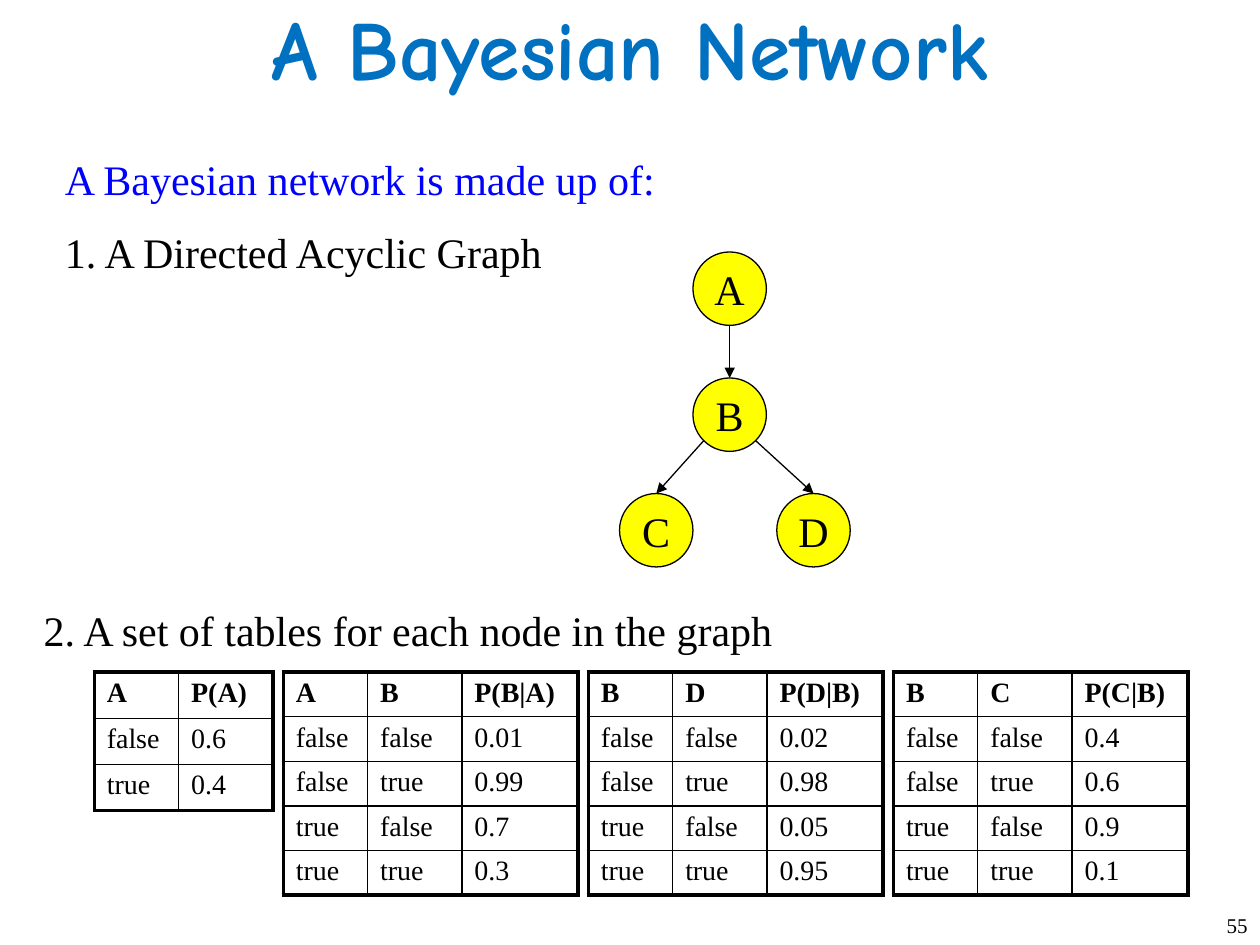
"""Build a slide that explains a Bayesian network by its graph and its probability tables."""
import math
from dataclasses import dataclass

import pptx
import pptx.dml.color
import pptx.enum.shapes
import pptx.enum.text
import pptx.oxml
import pptx.oxml.ns
import pptx.util
from pptx.util import Cm

BLACK = pptx.dml.color.RGBColor(0x00, 0x00, 0x00)
BLUE = pptx.dml.color.RGBColor(0x00, 0x00, 0xFF)
TITLE_BLUE = pptx.dml.color.RGBColor(0x00, 0x70, 0xC0)
YELLOW = pptx.dml.color.RGBColor(0xFF, 0xFF, 0x00)
SERIF = "Times New Roman"
ALIGN = pptx.enum.text.PP_ALIGN
ANCHOR = pptx.enum.text.MSO_ANCHOR

NODE_SIZE = 1.48
THIN, THICK = 1, 2.25
TABLES_LEFT, TABLES_TOP, TABLES_GAP = 1.9, 13.55, 0.21
COLUMN_WIDTHS = {2: (1.7, 1.9), 3: (1.7, 1.9, 2.34)}


@dataclass(frozen=True)
class Style:
    size: float = 24
    color: pptx.dml.color.RGBColor = BLACK
    font: str = SERIF
    bold: bool = False
    align: ALIGN = ALIGN.LEFT
    anchor: ANCHOR = ANCHOR.TOP


@dataclass(frozen=True)
class Caption:
    text: str
    left: float
    top: float
    width: float
    height: float
    style: Style = Style()


@dataclass(frozen=True)
class Node:
    name: str
    left: float
    top: float


@dataclass(frozen=True)
class ProbabilityTable:
    header: tuple[str, ...]
    rows: tuple[tuple[str, ...], ...]
    row_height: float = 0.88


CAPTIONS = (
    Caption("A Bayesian Network", 0, 0, 25.4, 1.9,
            Style(48, TITLE_BLUE, "Comic Neue", True, ALIGN.CENTER, ANCHOR.MIDDLE)),
    Caption("A Bayesian network is made up of:", 1.06, 2.96, 12.7, 1.48, Style(color=BLUE)),
    Caption("1. A Directed Acyclic Graph", 1.06, 4.44, 10.58, 1.27),
    Caption("2. A set of tables for each node in the graph", 0.63, 12.07, 18.2, 1.27),
    Caption("55", 22.86, 18.26, 2.54, 0.79,
            Style(12, align=ALIGN.RIGHT, anchor=ANCHOR.MIDDLE)),
)
NODES = (Node("A", 13.97, 5.08), Node("B", 13.97, 7.62),
         Node("C", 12.49, 9.95), Node("D", 15.66, 9.95))
EDGES = (("A", "B"), ("B", "C"), ("B", "D"))


def conditional(parent: str, child: str, values: tuple[str, ...]) -> ProbabilityTable:
    """Return the table of a child given its parent."""
    states = ("false", "true")
    pairs = [(given, state) for given in states for state in states]
    rows = tuple((*pair, value) for pair, value in zip(pairs, values))
    return ProbabilityTable((parent, child, f"P({child}|{parent})"), rows)


TABLES = (
    ProbabilityTable(("A", "P(A)"), (("false", "0.6"), ("true", "0.4")), 0.93),
    conditional("A", "B", ("0.01", "0.99", "0.7", "0.3")),
    conditional("B", "D", ("0.02", "0.98", "0.05", "0.95")),
    conditional("B", "C", ("0.4", "0.6", "0.9", "0.1")),
)


def write(frame, text: str, style: Style) -> None:
    """Write one styled run into a text frame."""
    paragraph = frame.paragraphs[0]
    paragraph.alignment = style.align
    run = paragraph.add_run()
    run.text = text
    run.font.name = style.font
    run.font.size = pptx.util.Pt(style.size)
    run.font.bold = style.bold
    run.font.color.rgb = style.color


def add_caption(slide, caption: Caption) -> None:
    """Add a wrapped text box."""
    box = slide.shapes.add_textbox(
        Cm(caption.left), Cm(caption.top), Cm(caption.width), Cm(caption.height))
    box.text_frame.word_wrap = True
    box.text_frame.vertical_anchor = caption.style.anchor
    write(box.text_frame, caption.text, caption.style)


def add_node(slide, node: Node):
    """Add a labelled circle of the graph."""
    circle = slide.shapes.add_shape(
        pptx.enum.shapes.MSO_SHAPE.OVAL,
        Cm(node.left), Cm(node.top), Cm(NODE_SIZE), Cm(NODE_SIZE))
    circle.shadow.inherit = False
    circle.fill.solid()
    circle.fill.fore_color.rgb = YELLOW
    circle.line.color.rgb = BLACK
    circle.line.width = pptx.util.Pt(0.75)
    circle.text_frame.word_wrap = False
    circle.text_frame.vertical_anchor = ANCHOR.MIDDLE
    write(circle.text_frame, node.name, Style(align=ALIGN.CENTER))
    return circle


def add_edge(slide, parent, child) -> None:
    """Add an arrow from the lower rim of a parent to the top of a child."""
    radius = parent.width / 2
    side = (child.left > parent.left) - (child.left < parent.left)
    angle = side * math.pi / 4
    start_x = round(parent.left + radius * (1 + math.sin(angle)))
    start_y = round(parent.top + radius * (1 + math.cos(angle)))
    arrow = slide.shapes.add_connector(
        pptx.enum.shapes.MSO_CONNECTOR.STRAIGHT, start_x, start_y,
        child.left + child.width // 2, child.top)
    arrow.end_connect(child, 0)
    arrow.line.color.rgb = BLACK
    arrow.line.width = pptx.util.Pt(0.75)
    line = arrow.line._get_or_add_ln()
    line.append(pptx.oxml.parse_xml(
        f'<a:tailEnd {pptx.oxml.ns.nsdecls("a")} type="triangle"/>'))
    line.addnext(pptx.oxml.parse_xml(f'<a:effectLst {pptx.oxml.ns.nsdecls("a")}/>'))


def set_borders(cell, widths: dict[str, float]) -> None:
    """Draw the sides of a cell in the given widths."""
    properties = cell._tc.get_or_add_tcPr()
    for index, (side, width) in enumerate(widths.items()):
        properties.insert(index, pptx.oxml.parse_xml(
            f'<a:ln{side} {pptx.oxml.ns.nsdecls("a")} w="{pptx.util.Pt(width)}">'
            f'<a:solidFill><a:srgbClr val="{BLACK}"/></a:solidFill></a:ln{side}>'))


def add_probability_table(slide, content: ProbabilityTable, left: float) -> float:
    """Add a table with a thick outline and return its width."""
    lines = (content.header, *content.rows)
    widths = COLUMN_WIDTHS[len(content.header)]
    table = slide.shapes.add_table(
        len(lines), len(widths), Cm(left), Cm(TABLES_TOP),
        Cm(sum(widths)), Cm(content.row_height * len(lines))).table
    table.horz_banding = False
    for column, width in zip(table.columns, widths):
        column.width = Cm(width)
    for r, line in enumerate(lines):
        table.rows[r].height = Cm(content.row_height)
        for c, text in enumerate(line):
            cell = table.cell(r, c)
            cell.fill.background()
            cell.margin_top = cell.margin_bottom = Cm(0.11)
            write(cell.text_frame, text, Style(16, bold=r == 0))
            outer = {"L": c == 0, "R": c == len(widths) - 1,
                     "T": r == 0, "B": r == len(lines) - 1}
            set_borders(cell, {side: THICK if edge else THIN for side, edge in outer.items()})
    return sum(widths)


def main() -> None:
    """Build and save the slide."""
    deck = pptx.Presentation()
    deck.slide_width, deck.slide_height = Cm(25.4), Cm(19.05)
    slide = deck.slides.add_slide(deck.slide_layouts[6])
    for caption in CAPTIONS:
        add_caption(slide, caption)
    circles = {node.name: add_node(slide, node) for node in NODES}
    for parent, child in EDGES:
        add_edge(slide, circles[parent], circles[child])
    left = TABLES_LEFT
    for content in TABLES:
        left += add_probability_table(slide, content, left) + TABLES_GAP
    deck.save("out.pptx")


if __name__ == "__main__":
    main()
